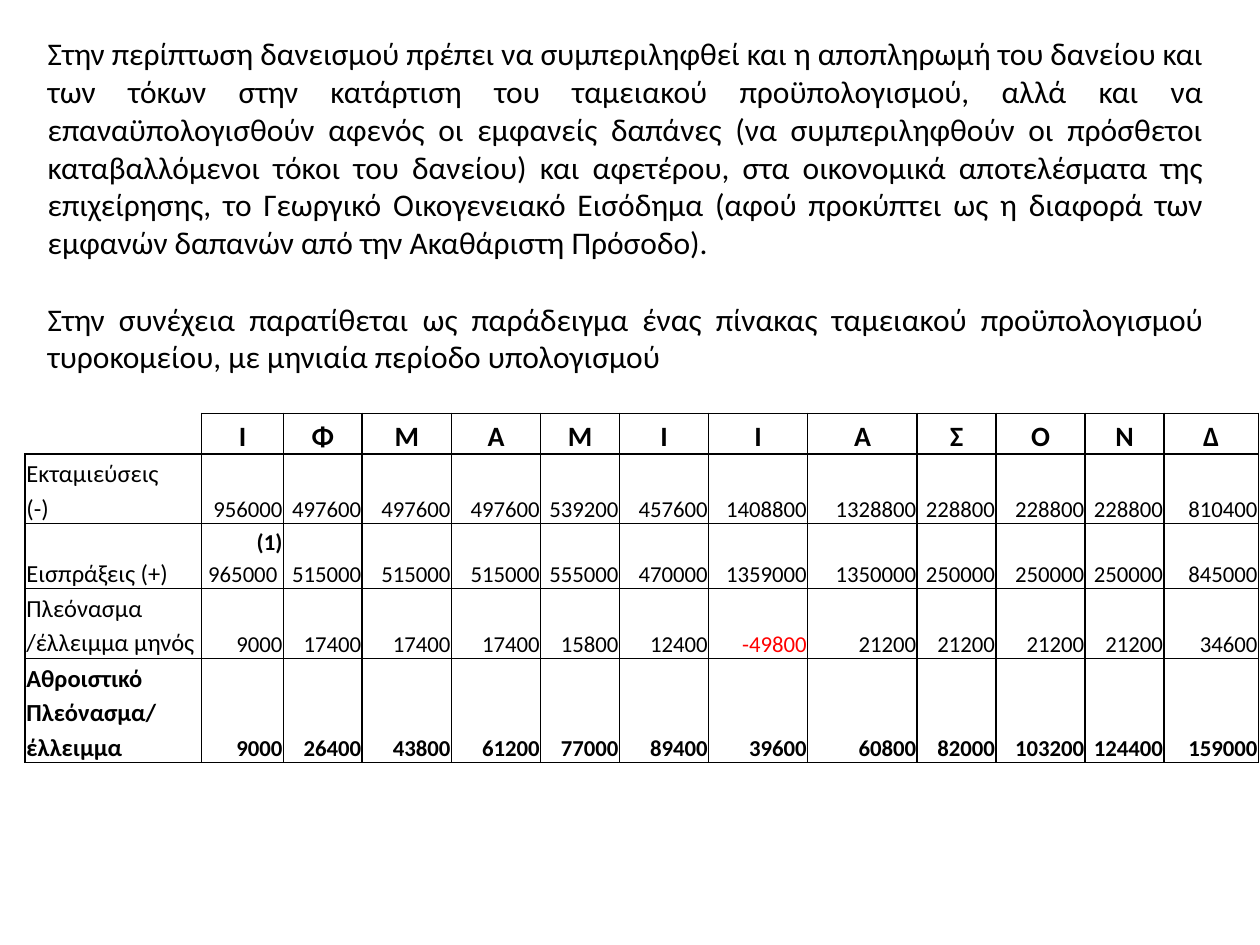
"""Build the slide on loan repayment with a cheese dairy's monthly cash budget."""
from dataclasses import dataclass

from lxml.etree import SubElement
from pptx import Presentation
from pptx.dml.color import RGBColor
from pptx.enum.text import MSO_ANCHOR, PP_ALIGN
from pptx.oxml import parse_xml
from pptx.oxml.ns import nsdecls, qn
from pptx.util import Pt


@dataclass(frozen=True)
class Theme:
    font: str = "Calibri"
    ink: str = "000000"
    deficit: str = "FF0000"
    body_size: float = 18
    month_size: float = 16
    label_size: float = 14
    value_size: float = 13
    border: float = 1
    line_spacing: float = 1.15


@dataclass(frozen=True)
class BudgetRow:
    label: str
    values: tuple
    height: float
    bold: bool = False


@dataclass(frozen=True)
class CellStyle:
    size: float
    align: PP_ALIGN
    bold: bool = False


THEME = Theme()
MONTHS = "ΙΦΜΑΜΙΙΑΣΟΝΔ"
HEADER_HEIGHT = 23
COLUMN_WIDTHS = (100.8, 46.8, 45, 51, 51, 45, 51, 56.6, 62.6, 45, 51, 45, 54)
FOOTNOTE = "(1)"
BUDGET = (
    BudgetRow("Εκταμιεύσεις\n(-)",
              (956000, 497600, 497600, 497600, 539200, 457600,
               1408800, 1328800, 228800, 228800, 228800, 810400), 39.4),
    BudgetRow("Εισπράξεις (+)",
              (f"{FOOTNOTE} 965000 ", 515000, 515000, 515000, 555000, 470000,
               1359000, 1350000, 250000, 250000, 250000, 845000), 36.6),
    BudgetRow("Πλεόνασμα /έλλειμμα μηνός",
              (9000, 17400, 17400, 17400, 15800, 12400,
               -49800, 21200, 21200, 21200, 21200, 34600), 39.4),
    BudgetRow("Αθροιστικό Πλεόνασμα/ έλλειμμα",
              (9000, 26400, 43800, 61200, 77000, 89400,
               39600, 60800, 82000, 103200, 124400, 159000), 58.3, True),
)
PARAGRAPHS = (
    "Στην περίπτωση δανεισμού πρέπει να συμπεριληφθεί και η αποπληρωμή του "
    "δανείου και των τόκων στην κατάρτιση του ταμειακού προϋπολογισμού, αλλά "
    "και να επαναϋπολογισθούν αφενός οι εμφανείς δαπάνες (να συμπεριληφθούν οι "
    "πρόσθετοι καταβαλλόμενοι τόκοι του δανείου) και αφετέρου, στα οικονομικά "
    "αποτελέσματα της επιχείρησης, το Γεωργικό Οικογενειακό Εισόδημα (αφού "
    "προκύπτει ως η διαφορά των εμφανών δαπανών από την Ακαθάριστη Πρόσοδο).",
    "Στην συνέχεια παρατίθεται ως παράδειγμα ένας πίνακας ταμειακού "
    "προϋπολογισμού τυροκομείου, με μηνιαία περίοδο υπολογισμού",
)


def format_span(span, size: float, bold: bool = False, color: str = THEME.ink) -> None:
    span.font.name = THEME.font
    span.font.size = Pt(size)
    span.font.bold = bold
    span.font.color.rgb = RGBColor.from_string(color)


def set_borders(cell, visible: str = "LRTB") -> None:
    properties = cell._tc.get_or_add_tcPr()
    for index, side in enumerate("LRTB"):
        line = parse_xml(f'<a:ln{side} {nsdecls("a")} w="{Pt(THEME.border)}"/>')
        if side in visible:
            fill = SubElement(line, qn("a:solidFill"))
            SubElement(fill, qn("a:srgbClr"), val=THEME.ink)
        else:
            SubElement(line, qn("a:noFill"))
        properties.insert(index, line)


def fill_cell(cell, text: str, style: CellStyle) -> None:
    cell.text_frame.text = text
    for para in cell.text_frame.paragraphs:
        para.alignment = style.align
        para.line_spacing = THEME.line_spacing
        if text.startswith(FOOTNOTE):
            para.text = FOOTNOTE
            para.add_run().text = text.removeprefix(FOOTNOTE)
        color = THEME.deficit if text.startswith("-") else THEME.ink
        for span in para.runs:
            format_span(span, style.size, style.bold or span.text == FOOTNOTE, color)


def add_explanation(page) -> None:
    box = page.shapes.add_textbox(Pt(20.2), Pt(15.1), Pt(674.6), Pt(203.8))
    frame = box.text_frame
    frame.word_wrap = True
    frame.vertical_anchor = MSO_ANCHOR.MIDDLE
    frame.text = "\n".join(PARAGRAPHS)
    for para in frame.paragraphs:
        para.alignment = PP_ALIGN.JUSTIFY
        format_span(para.runs[0], THEME.body_size)
    frame.paragraphs[-1].space_before = Pt(22)


def add_budget(page) -> None:
    heights = (HEADER_HEIGHT, *(row.height for row in BUDGET))
    table = page.shapes.add_table(
        len(heights), len(COLUMN_WIDTHS), Pt(14.4), Pt(236.2),
        Pt(sum(COLUMN_WIDTHS)), Pt(sum(heights))).table
    table.first_row = table.horz_banding = False
    for column, width in zip(table.columns, COLUMN_WIDTHS):
        column.width = Pt(width)
    for row, height in zip(table.rows, heights):
        row.height = Pt(height)
    for cell in table.iter_cells():
        cell.fill.background()
        cell.vertical_anchor = MSO_ANCHOR.BOTTOM
        cell.margin_left = cell.margin_right = cell.margin_top = Pt(0.7)
        cell.margin_bottom = Pt(0)
        set_borders(cell, "RB" if cell is table.cell(0, 0) or
                    cell._tc is table.cell(0, 0)._tc else "LRTB")
    month_style = CellStyle(THEME.month_size, PP_ALIGN.CENTER, True)
    for index, month in enumerate(MONTHS, 1):
        fill_cell(table.cell(0, index), month, month_style)
    for row_index, row in enumerate(BUDGET, 1):
        label_style = CellStyle(THEME.label_size, PP_ALIGN.LEFT, row.bold)
        value_style = CellStyle(THEME.value_size, PP_ALIGN.RIGHT, row.bold)
        fill_cell(table.cell(row_index, 0), row.label, label_style)
        for index, value in enumerate(row.values, 1):
            fill_cell(table.cell(row_index, index), str(value), value_style)


def main() -> None:
    deck = Presentation()
    deck.slide_width, deck.slide_height = Pt(720), Pt(540)
    page = deck.slides.add_slide(deck.slide_layouts[6])
    add_budget(page)
    add_explanation(page)
    deck.save("out.pptx")


if __name__ == "__main__":
    main()
